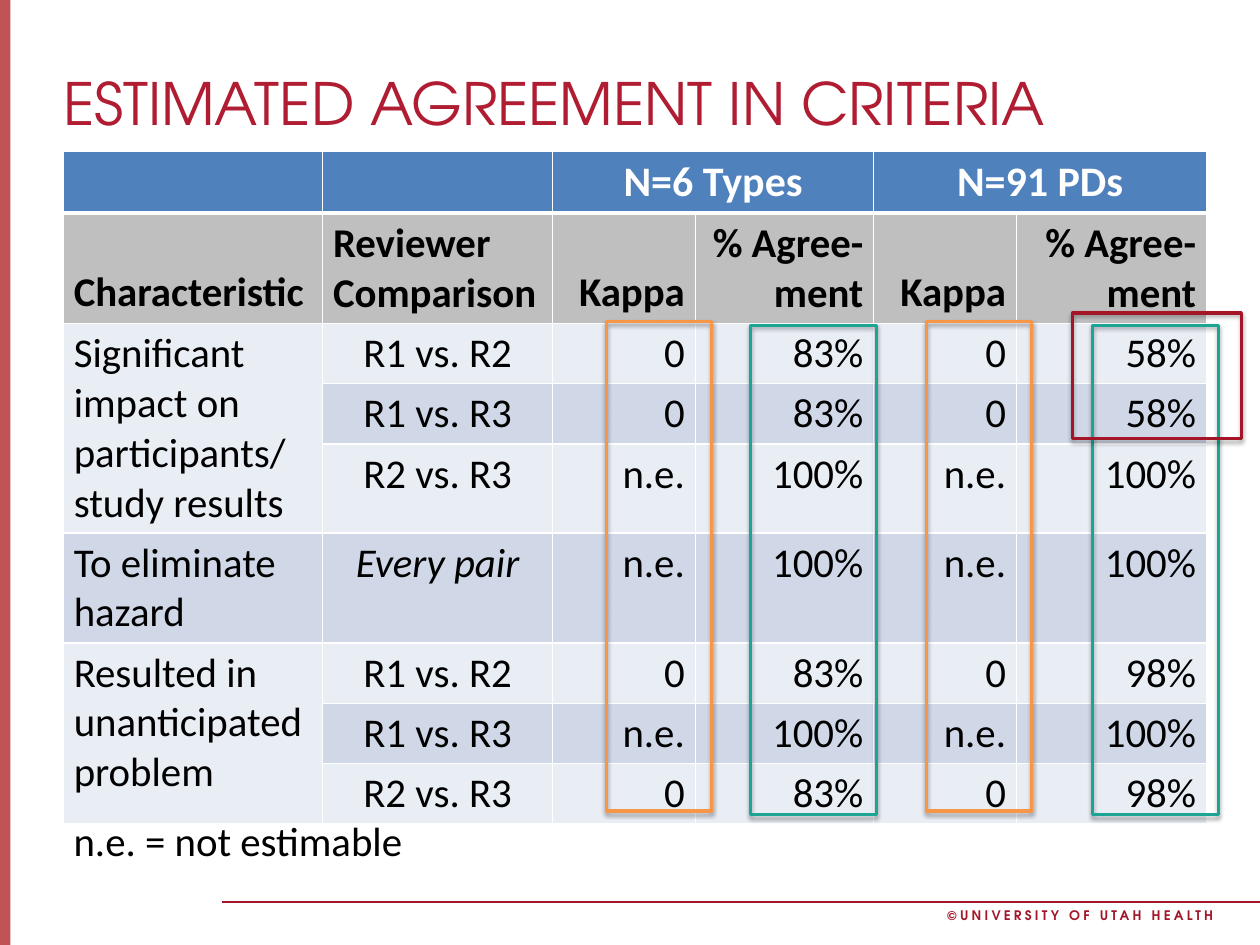
from lxml import etree
from pptx import Presentation
from pptx.dml.color import RGBColor
from pptx.enum.shapes import MSO_CONNECTOR, MSO_SHAPE
from pptx.enum.text import MSO_ANCHOR, PP_ALIGN
from pptx.oxml import parse_xml
from pptx.oxml.ns import nsdecls, qn
from pptx.util import Pt

LEFT, MID, RIGHT = PP_ALIGN.LEFT, PP_ALIGN.CENTER, PP_ALIGN.RIGHT
TOP, CENTER, BOTTOM = MSO_ANCHOR.TOP, MSO_ANCHOR.MIDDLE, MSO_ANCHOR.BOTTOM
RECT, LINE = MSO_SHAPE.RECTANGLE, MSO_CONNECTOR.STRAIGHT
HEAD = "TeX Gyre Adventor"
RED, TEAL, ORANGE = "A21727", "1AA594", "F79646"
color = RGBColor.from_string


def write(frame, text, align, hue, **form):
    frame.word_wrap = True
    para = frame.paragraphs[0]
    para.alignment = align
    run = para.add_run()
    run.text = text
    run.font.color.rgb = color(hue)
    for key, value in form.items():
        setattr(run.font, key, value)
    return run


def frame_box(shapes, x, y, w, h, hue):
    """Add an unfilled outline with a soft shadow below it."""
    box = shapes.add_shape(RECT, Pt(x), Pt(y), Pt(w), Pt(h))
    box.fill.background()
    box.line.color.rgb = color(hue)
    box.line.width = Pt(2.25)
    box._element.spPr.append(parse_xml(
        f'<a:effectLst {nsdecls("a")}><a:outerShdw blurRad="{Pt(3.1)}" '
        f'dist="{Pt(1.8)}" dir="5400000" rotWithShape="0"><a:srgbClr val="000000">'
        '<a:alpha val="35000"/></a:srgbClr></a:outerShdw></a:effectLst>'))


deck = Presentation()
deck.slide_width, deck.slide_height = Pt(864), Pt(648)
slide = deck.slides.add_slide(deck.slide_layouts[5])
shapes = slide.shapes

# Side bar and footer
bar = shapes.add_shape(RECT, 0, 0, Pt(7.2), Pt(648))
bar.shadow.inherit = False
bar.fill.solid()
bar.fill.fore_color.rgb = color("AF282C")
bar.line.fill.background()
tint = bar._element.spPr.find(qn("a:solidFill"))[0]
etree.SubElement(tint, qn("a:alpha"), val="80000")

rule = shapes.add_connector(LINE, Pt(152), Pt(618.5), Pt(864), Pt(618.5))
rule.line.color.rgb = color(RED)
rule.line.width = Pt(1)
etree.SubElement(rule._element.spPr, qn("a:effectLst"))

foot = shapes.add_textbox(Pt(617.8), Pt(618.5), Pt(221), Pt(18))
run = write(foot.text_frame, "©UNIVERSITY OF UTAH HEALTH", RIGHT, RED,
            name=HEAD, size=Pt(9), bold=True)
run.font._element.set("spc", "220")

title = shapes.title
title.left, title.top, title.width, title.height = Pt(36), Pt(44), Pt(785), Pt(52)
title.text_frame.vertical_anchor = CENTER
write(title.text_frame, "ESTIMATED AGREEMENT IN CRITERIA", LEFT, "B01C32",
      name=HEAD, size=Pt(40))

# Agreement table
rows = [
    ["", "", "N=6 Types", "", "N=91 PDs", ""],
    ["Characteristic", "Reviewer Comparison"] + ["Kappa", "% Agree-ment"] * 2,
    ["Significant impact on participants/ study results",
     "R1 vs. R2", "0", "83%", "0", "58%"],
    ["", "R1 vs. R3", "0", "83%", "0", "58%"],
    ["", "R2 vs. R3", "n.e.", "100%", "n.e.", "100%"],
    ["To eliminate hazard", "Every pair", "n.e.", "100%", "n.e.", "100%"],
    ["Resulted in unanticipated problem",
     "R1 vs. R2", "0", "83%", "0", "98%"],
    ["", "R1 vs. R3", "n.e.", "100%", "n.e.", "100%"],
    ["", "R2 vs. R3", "0", "83%", "0", "98%"],
]
widths = [177.8, 157.7, 97.9, 122.4, 97.9, 130.3]
heights = [42.2, 75.5, 41.4, 41.4, 61, 75.5, 41.4, 41.4, 41.4]
fills = ["4F81BD", "BFBFBF"] + ["E9EDF4", "D0D8E8"] * 3 + ["E9EDF4"]

table = shapes.add_table(len(rows), len(widths), Pt(43.4), Pt(104),
                         Pt(sum(widths)), Pt(sum(heights))).table
for col, width in zip(table.columns, widths):
    col.width = Pt(width)
for row, height in zip(table.rows, heights):
    row.height = Pt(height)
for r1, c1, r2, c2 in [(0, 2, 0, 3), (0, 4, 0, 5), (2, 0, 4, 0), (6, 0, 8, 0)]:
    table.cell(r1, c1).merge(table.cell(r2, c2))

for r, row in enumerate(rows):
    for c, text in enumerate(row):
        cell = table.cell(r, c)
        thick = {"T": 3 if r == 1 else 1, "B": 3 if r == 0 else 1}
        for side in "LRTB":
            cell._tc.get_or_add_tcPr().append(parse_xml(
                f'<a:ln{side} {nsdecls("a")} w="{Pt(thick.get(side, 1))}">'
                '<a:solidFill><a:srgbClr val="FFFFFF"/></a:solidFill>'
                f'</a:ln{side}>'))
        cell.fill.solid()
        cell.fill.fore_color.rgb = color(fills[r])
        cell.vertical_anchor = BOTTOM if r == 1 else TOP
        if not text:
            continue
        if r == 0 or (r > 1 and c == 1):
            align = MID
        else:
            align = RIGHT if c > 1 else LEFT
        write(cell.text_frame, text, align, "000000" if r else "FFFFFF",
              name="Calibri", size=Pt(28 if r else 28.8), bold=r < 2,
              italic=text == "Every pair")

note = shapes.add_textbox(Pt(43.4), Pt(556), Pt(762), Pt(41))
write(note.text_frame, "n.e. = not estimable", LEFT, "000000",
      name="Calibri", size=Pt(28))

# Column highlights
pair = shapes.add_group_shape().shapes
for x in (514.8, 749):
    frame_box(pair, x, 223, 86.4, 335.5, TEAL)
frame_box(shapes, 735.3, 214.7, 116, 86.2, "A31527")
pair = shapes.add_group_shape().shapes
for x in (416, 635.2):
    frame_box(pair, x, 220.7, 72, 335.5, ORANGE)

deck.save("out.pptx")
